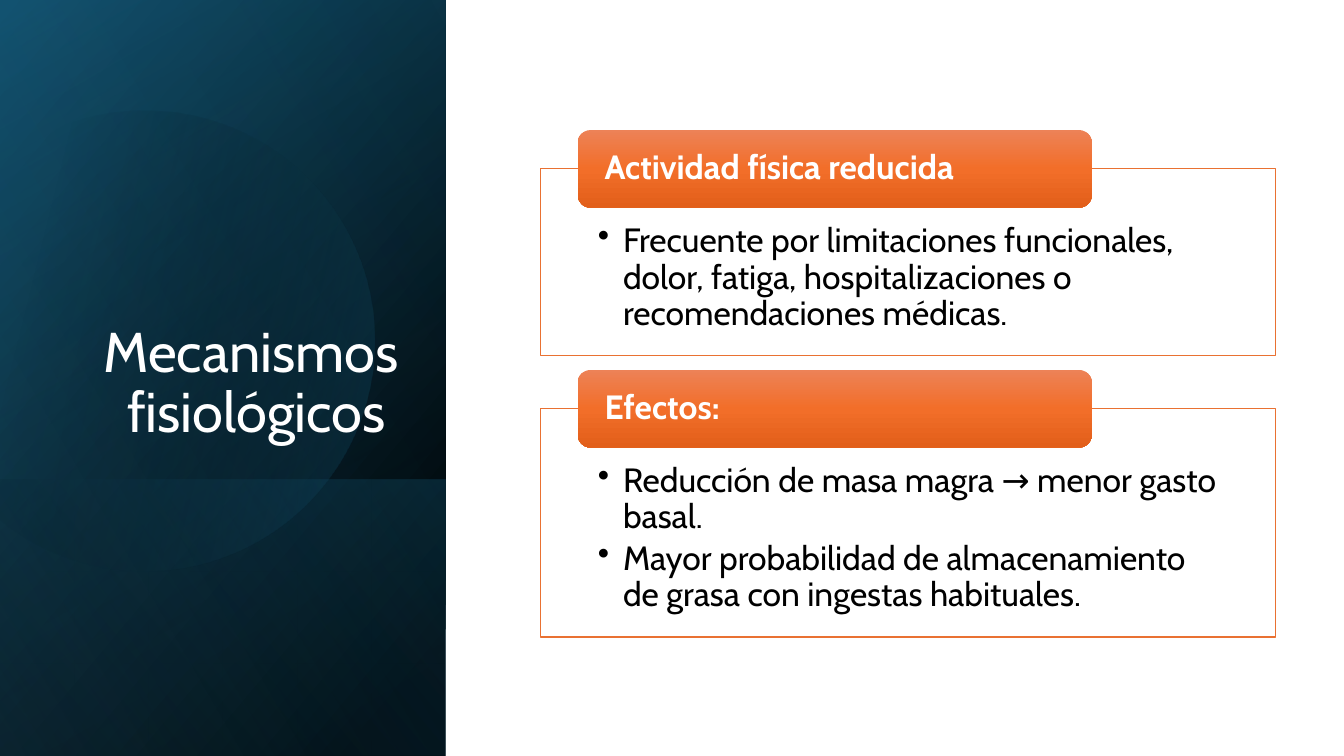
import math
from dataclasses import dataclass

from lxml import etree
from pptx import Presentation
from pptx.dml.color import RGBColor
from pptx.enum import shapes, text
from pptx.oxml import ns
from pptx.util import Inches, Pt


@dataclass(frozen=True)
class Theme:
    font: str = "Cabin"
    title_size: int = 40
    body_size: int = 24
    white: str = "FFFFFF"
    black: str = "000000"
    navy: str = "104862"
    teal: str = "156082"
    sky: str = "46B1E1"
    orange: str = "E97132"
    header_stops: tuple = ((0, "ED8257", 100), (50, "F26E29", 100), (100, "E25F1A", 100))


THEME = Theme()

SIDEBAR = (-1.54, 1.54, 7.5, 4.42)
SIDEBAR_LAYERS = [
    (SIDEBAR, 50, [(8, THEME.black, 100), (100, THEME.navy, 100)]),
    (SIDEBAR, 30, [(0, THEME.black, 0), (99, THEME.teal, 46)]),
    ((0.84, 3.92, 2.74, 4.42), 130, [(2, THEME.teal, 29), (100, THEME.black, 30)]),
]
SIDEBAR_GLOW = (SIDEBAR, 120, [(0, THEME.black, 0), (99, THEME.sky, 11)])

SECTIONS = [
    (1.67, 1.86, "Actividad física reducida", [
        "Frecuente por limitaciones funcionales, dolor, fatiga, hospitalizaciones o recomendaciones médicas.",
    ]),
    (4.05, 2.27, "Efectos:", [
        "Reducción de masa magra → menor gasto basal.",
        "Mayor probabilidad de almacenamiento de grasa con ingestas habituales.",
    ]),
]


def set_gradient(shape, stops, angle):
    shape.shadow.inherit = False
    shape.line.fill.background()
    shape.fill.gradient()
    gradient = shape._element.spPr.find(ns.qn("a:gradFill"))
    for child in list(gradient):
        gradient.remove(child)
    stop_list = etree.SubElement(gradient, ns.qn("a:gsLst"))
    for position, color, opacity in stops:
        stop = etree.SubElement(stop_list, ns.qn("a:gs"), pos=str(position * 1000))
        rgb = etree.SubElement(stop, ns.qn("a:srgbClr"), val=color)
        if opacity < 100:
            etree.SubElement(rgb, ns.qn("a:alpha"), val=str(opacity * 1000))
    etree.SubElement(gradient, ns.qn("a:lin"), ang=str(angle * 60000), scaled="0")


def set_frame(frame, anchor, insets):
    frame.word_wrap = True
    frame.vertical_anchor = anchor
    frame.margin_left, frame.margin_top, frame.margin_right, frame.margin_bottom = map(Inches, insets)


def format_paragraph(paragraph, size, color, align, bold=False):
    paragraph.alignment = align
    paragraph.line_spacing = 0.9
    for run in paragraph.runs:
        run.font.name = THEME.font
        run.font.size = Pt(size)
        run.font.bold = bold
        run.font.color.rgb = RGBColor.from_string(color)


def add_bullet(paragraph):
    paragraph.space_after = Pt(3.6)
    properties = paragraph._p.get_or_add_pPr()
    properties.set("marL", str(Inches(0.25)))
    properties.set("indent", str(Inches(-0.25)))
    etree.SubElement(properties, ns.qn("a:buChar"), char="•")


def add_sidebar_layer(slide, box, angle, stops):
    layer = slide.shapes.add_shape(shapes.MSO_SHAPE.RECTANGLE, *map(Inches, box))
    layer.rotation = 90
    layer._element.spPr.xfrm.set("flipH", "1")
    set_gradient(layer, stops, angle)


def add_cut_circle(slide):
    center_x, center_y, radius, tilt, half_arc = 1.43, 3.34, 2.28, 16.1, 133.7
    steps = 120
    angles = [math.radians(tilt - half_arc + 2 * half_arc * i / steps) for i in range(steps + 1)]
    points = [
        (Inches(center_x + radius * math.cos(a)), Inches(center_y + radius * math.sin(a)))
        for a in angles
    ]
    outline = slide.shapes.build_freeform(*points[0])
    outline.add_line_segments(points[1:], close=True)
    circle = outline.convert_to_shape()
    circle.rotation = 360 - tilt
    set_gradient(circle, [(29, THEME.black, 0), (100, THEME.teal, 43)], 30)


def add_title(slide, wording):
    title = slide.shapes.add_textbox(*map(Inches, (0.64, 1.84, 3.41, 2.62)))
    frame = title.text_frame
    set_frame(frame, text.MSO_ANCHOR.BOTTOM, (0.1, 0.05, 0.1, 0.05))
    frame.text = wording
    format_paragraph(frame.paragraphs[0], THEME.title_size, THEME.white, text.PP_ALIGN.RIGHT)


def add_panel(slide, top, height, bullets):
    panel = slide.shapes.add_shape(
        shapes.MSO_SHAPE.RECTANGLE, *map(Inches, (5.36, top, 7.29, height)))
    panel.shadow.inherit = False
    panel.fill.solid()
    panel.fill.fore_color.rgb = RGBColor.from_string(THEME.white)
    panel.line.color.rgb = RGBColor.from_string(THEME.orange)
    panel.line.width = Pt(1)
    frame = panel.text_frame
    set_frame(frame, text.MSO_ANCHOR.TOP, (0.57, 0.55, 0.57, 0.19))
    frame.text = "\n".join(bullets)
    for paragraph in frame.paragraphs:
        format_paragraph(paragraph, THEME.body_size, THEME.black, text.PP_ALIGN.LEFT)
        add_bullet(paragraph)


def add_header(slide, panel_top, heading):
    header = slide.shapes.add_shape(
        shapes.MSO_SHAPE.ROUNDED_RECTANGLE, *map(Inches, (5.73, panel_top - 0.38, 5.1, 0.77)))
    set_gradient(header, THEME.header_stops, 90)
    frame = header.text_frame
    set_frame(frame, text.MSO_ANCHOR.MIDDLE, (0.23, 0, 0.23, 0))
    frame.text = heading
    format_paragraph(frame.paragraphs[0], THEME.body_size, THEME.white, text.PP_ALIGN.LEFT, bold=True)


def main():
    deck = Presentation()
    deck.slide_width, deck.slide_height = Inches(13.33), Inches(7.5)
    slide = deck.slides.add_slide(deck.slide_layouts[6])
    for layer in SIDEBAR_LAYERS:
        add_sidebar_layer(slide, *layer)
    add_cut_circle(slide)
    add_sidebar_layer(slide, *SIDEBAR_GLOW)
    add_title(slide, "Mecanismos fisiológicos ")
    for top, height, heading, bullets in SECTIONS:
        add_panel(slide, top, height, bullets)
        add_header(slide, top, heading)
    deck.save("out.pptx")


if __name__ == "__main__":
    main()
